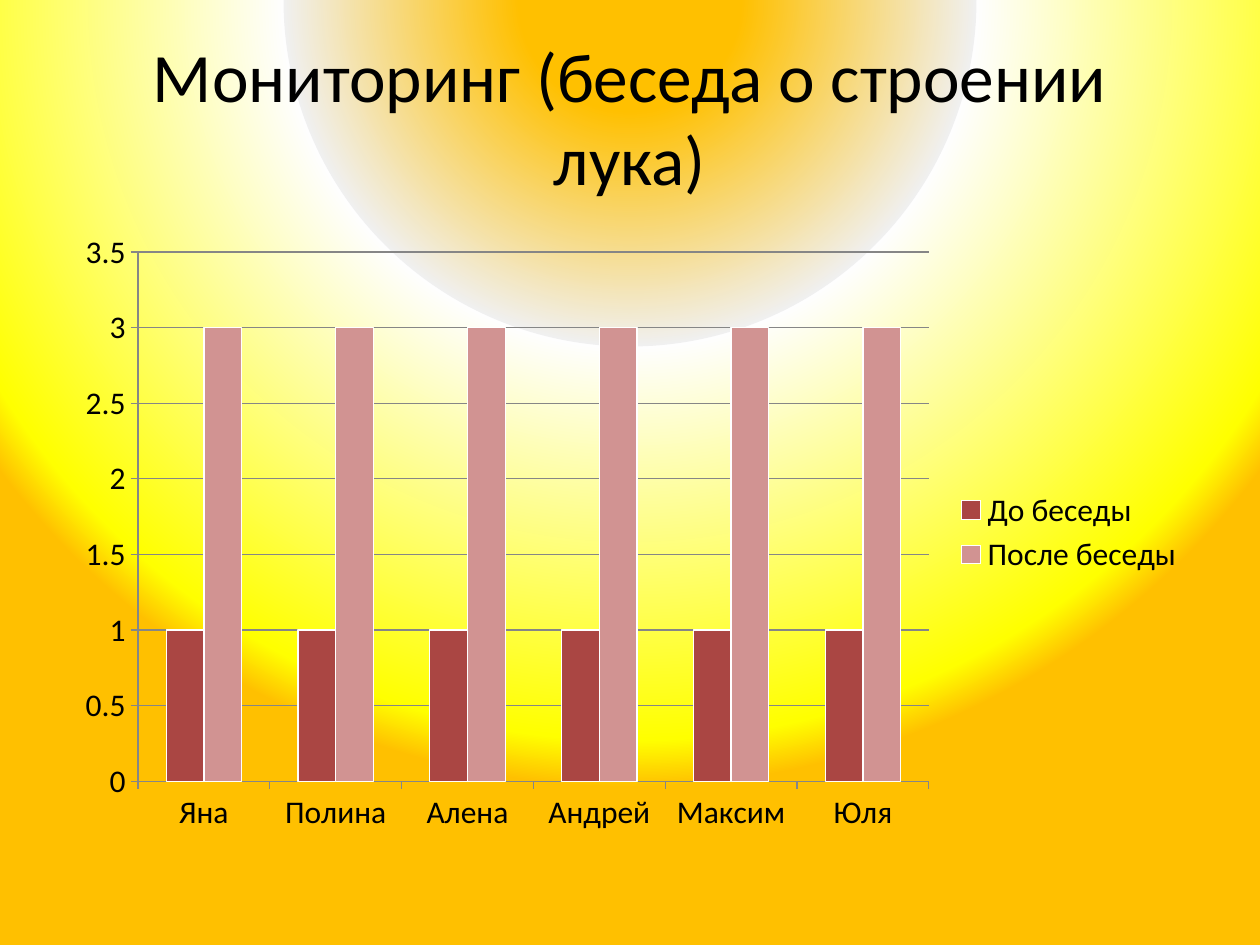
from dataclasses import dataclass
from pptx import Presentation
from pptx.chart.data import CategoryChartData as Data
from pptx.dml.color import RGBColor as Color
from pptx.enum.chart import XL_CHART_TYPE as Kind, XL_LEGEND_POSITION as Side, XL_TICK_MARK as Tick
from pptx.enum.text import MSO_ANCHOR as Anchor, MSO_AUTO_SIZE as Fit, PP_ALIGN as Align
from pptx.oxml import parse_xml
from pptx.oxml.ns import nsdecls
from pptx.util import Pt


@dataclass(frozen=True)
class Theme:
    face: str = "Calibri"
    ink: str = "000000"
    grid: str = "868686"
    edge: str = "FFFFFF"
    bars: tuple = ("AA4643", "D19392")
    head: float = 39.6
    label: float = 18
    glow: tuple = ((14, "FFC000", 100), (44, "F0F0F0", 100), (44, "FEFEFE", 100),
                   (94, "FFFF00", 80), (100, "FFC000", 100))


THEME = Theme()
NAMES = ("Яна", "Полина", "Алена", "Андрей", "Максим", "Юля")
SCORES = {"До беседы": 1, "После беседы": 3}


def apply(item, **values):
    for name, value in values.items():
        setattr(item, name, value)


def style(font, size):
    apply(font, name=THEME.face, size=Pt(size), bold=False)
    font.color.rgb = Color.from_string(THEME.ink)


def rule(line, color):
    line.color.rgb = Color.from_string(color)
    line.width = Pt(0.75)


def paint(slide):
    stops = "".join(
        f'<a:gs pos="{pos * 1000}"><a:srgbClr val="{color}">'
        f'<a:alpha val="{alpha * 1000}"/></a:srgbClr></a:gs>'
        for pos, color, alpha in THEME.glow)
    back = parse_xml(
        f'<p:bg {nsdecls("p", "a")}><p:bgPr><a:gradFill rotWithShape="1">'
        f'<a:gsLst>{stops}</a:gsLst><a:path path="circle">'
        '<a:fillToRect l="50000" t="-80000" r="50000" b="180000"/></a:path>'
        '</a:gradFill><a:effectLst/></p:bgPr></p:bg>')
    slide.element.cSld.insert(0, back)


def add_title(slide, text):
    title = slide.shapes.title
    apply(title, left=Pt(36), top=Pt(21.6), width=Pt(648), height=Pt(90))
    frame = title.text_frame
    frame.text = text
    apply(frame, word_wrap=True, auto_size=Fit.NONE, vertical_anchor=Anchor.MIDDLE)
    para = frame.paragraphs[0]
    para.alignment = Align.CENTER
    style(para.runs[0].font, THEME.head)


def add_bars(slide):
    data = Data()
    data.categories = NAMES
    for name, score in SCORES.items():
        data.add_series(name, [score] * len(NAMES))
    chart = slide.shapes.add_chart(
        Kind.COLUMN_CLUSTERED, Pt(36), Pt(126), Pt(648), Pt(356.4), data).chart
    apply(chart, has_title=False, has_legend=True)
    style(chart.font, THEME.label)
    apply(chart.legend, position=Side.RIGHT, include_in_layout=False)
    for axis in (chart.category_axis, chart.value_axis):
        apply(axis, major_tick_mark=Tick.OUTSIDE, minor_tick_mark=Tick.NONE)
        rule(axis.format.line, THEME.grid)
    scale = chart.value_axis
    apply(scale, minimum_scale=0, maximum_scale=3.5, major_unit=0.5,
          has_major_gridlines=True)
    rule(scale.major_gridlines.format.line, THEME.grid)
    plot = chart.plots[0]
    apply(plot, gap_width=150, overlap=0, vary_by_categories=False)
    for group, color in zip(plot.series, THEME.bars):
        group.format.fill.solid()
        group.format.fill.fore_color.rgb = Color.from_string(color)
        rule(group.format.line, THEME.edge)


def main():
    deck = Presentation()
    apply(deck, slide_width=Pt(720), slide_height=Pt(540))
    slide = deck.slides.add_slide(deck.slide_layouts[5])
    paint(slide)
    add_title(slide, "Мониторинг (беседа о строении лука)")
    add_bars(slide)
    deck.save("out.pptx")


if __name__ == "__main__":
    main()
